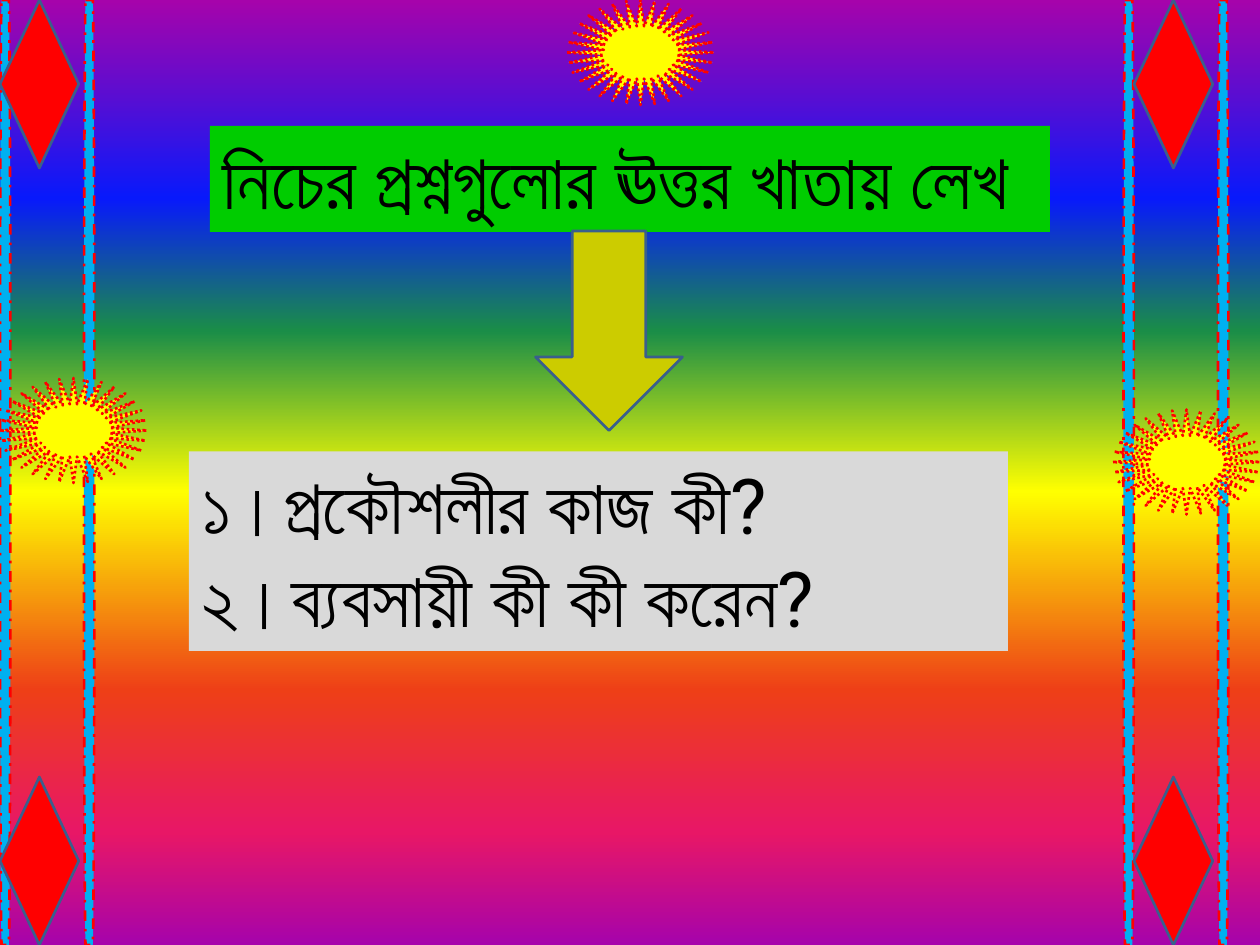
import pptx
import pptx.dml.color
import pptx.enum.dml
import pptx.enum.shapes
import pptx.enum.text
import pptx.oxml
import pptx.oxml.ns
import pptx.util

Pt = pptx.util.Pt
RGBColor = pptx.dml.color.RGBColor
SHAPES = pptx.enum.shapes.MSO_SHAPE
DASHES = pptx.enum.dml.MSO_LINE

RED = RGBColor(0xFF, 0x00, 0x00)
SKY = RGBColor(0x00, 0xB0, 0xF0)
YELLOW = RGBColor(0xFF, 0xFF, 0x00)
STEEL = RGBColor(0x3A, 0x5F, 0x8C)
GREEN = RGBColor(0x00, 0xCC, 0x00)
GREY = RGBColor(0xD9, 0xD9, 0xD9)
OLIVE = RGBColor(0xCC, 0xCC, 0x00)
BLACK = RGBColor(0x00, 0x00, 0x00)
RAINBOW = [
    (0, RGBColor(0xA6, 0x03, 0xAB)),
    (21, RGBColor(0x08, 0x19, 0xFB)),
    (35, RGBColor(0x1A, 0x8D, 0x48)),
    (52, RGBColor(0xFF, 0xFF, 0x00)),
    (73, RGBColor(0xEE, 0x3F, 0x17)),
    (88, RGBColor(0xE8, 0x17, 0x66)),
    (100, RGBColor(0xA6, 0x03, 0xAB)),
]

deck = pptx.Presentation()
deck.slide_width, deck.slide_height = Pt(720), Pt(540)
slide = deck.slides.add_slide(deck.slide_layouts[6])


def add_ornament(preset, left, top, width, height, fill, line, dash=None):
    ornament = slide.shapes.add_shape(preset, Pt(left), Pt(top), Pt(width), Pt(height))
    ornament.shadow.inherit = False
    ornament.fill.solid()
    ornament.fill.fore_color.rgb = fill
    ornament.line.color.rgb = line
    ornament.line.width = Pt(1.5)
    if dash is not None:
        ornament.line.dash_style = dash
    return ornament


def add_panel(left, top, width, height, fill, lines):
    panel = slide.shapes.add_textbox(Pt(left), Pt(top), Pt(width), Pt(height))
    panel.fill.solid()
    panel.fill.fore_color.rgb = fill
    frame = panel.text_frame
    frame.word_wrap = True
    frame.auto_size = pptx.enum.text.MSO_AUTO_SIZE.SHAPE_TO_FIT_TEXT
    frame.text = "\n".join(lines)
    for paragraph in frame.paragraphs:
        paragraph.font.name = "Roboto"
        paragraph.font.size = Pt(44)
        paragraph.font.color.rgb = BLACK


# Rainbow background, running from top to bottom
backdrop = slide.background.fill
backdrop.gradient()
backdrop.gradient_angle = 270
stops = slide.element.find(".//" + pptx.oxml.ns.qn("a:gsLst"))
for stop in list(stops):
    stops.remove(stop)
for percent, color in RAINBOW:
    stops.append(pptx.oxml.parse_xml(
        f'<a:gs {pptx.oxml.ns.nsdecls("a")} pos="{percent * 1000}">'
        f'<a:srgbClr val="{color}"/></a:gs>'))

# Border poles
for left in (48, 642, 0, 696):
    add_ornament(SHAPES.FLOWCHART_TERMINATOR, left, 0, 6, 540, SKY, RED, DASHES.DASH_DOT)

# Corner diamonds, turned upright
for left in (622.5, -25.5):
    for top in (469.5, 25.5):
        diamond = add_ornament(SHAPES.FLOWCHART_DECISION, left, top, 96, 45, RED, STEEL)
        diamond.rotation = 90

# Suns
for left, top in ((324, 0), (636, 234), (0, 216)):
    sun = add_ornament(SHAPES.STAR_32_POINT, left, top, 84, 60,
                       YELLOW, RED, DASHES.ROUND_DOT)
    sun.adjustments[0] = 0.25

# Instruction and questions, with the arrow between them
add_panel(120, 72, 480, 60.6, GREEN, ["নিচের প্রশ্নগুলোর ঊত্তর খাতায় লেখ"])
add_panel(108, 258, 468, 114, GREY, ["১।প্রকৌশলীর কাজ কী?", "২।ব্যবসায়ী কী কী করেন?"])
add_ornament(SHAPES.DOWN_ARROW, 306, 132, 84, 114, OLIVE, STEEL)

deck.save("out.pptx")
